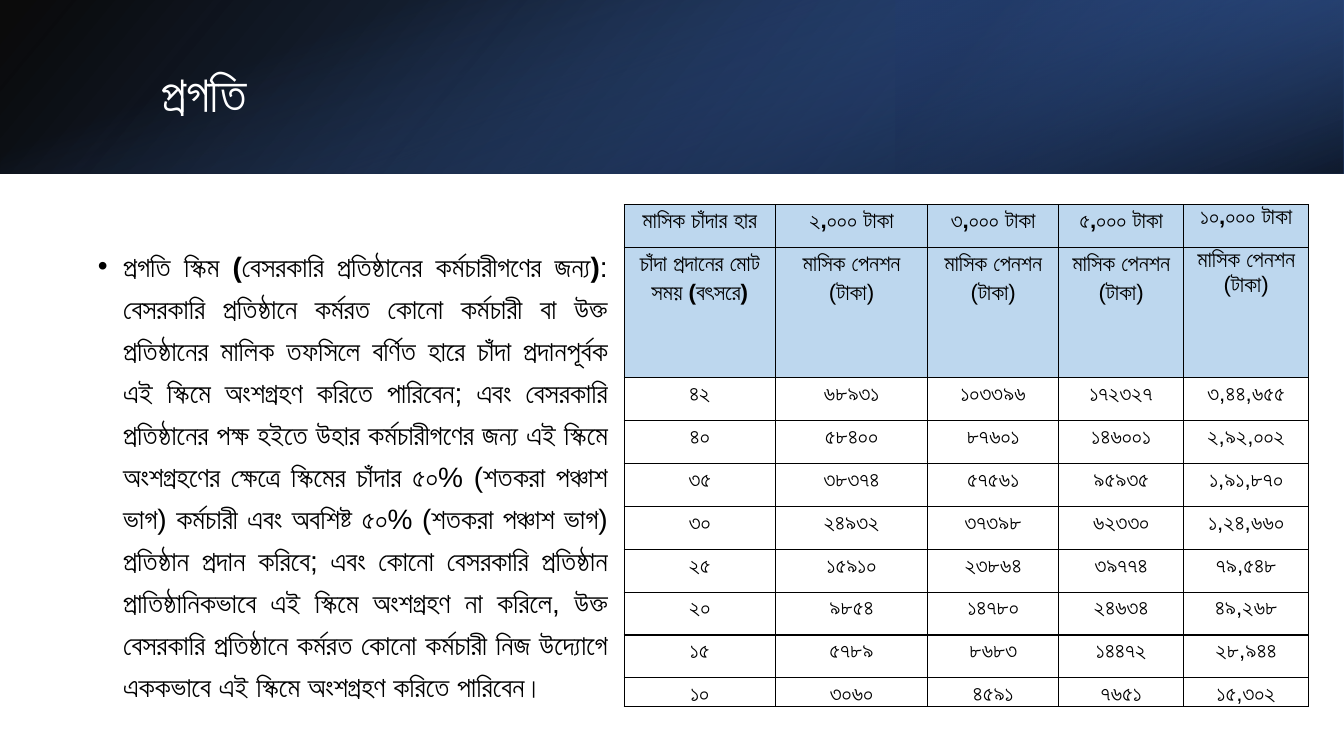
from lxml.etree import SubElement
from pptx import Presentation
from pptx.dml.color import RGBColor
from pptx.enum.shapes import MSO_SHAPE
from pptx.enum.text import MSO_ANCHOR, MSO_AUTO_SIZE, PP_ALIGN
from pptx.oxml.ns import qn
from pptx.util import Cm, Pt

WIDTH, HEIGHT, BANNER = 33.87, 19.05, 4.37
FONT = "Arial"
COLUMNS = [3.81, 3.84, 3.3, 3.15, 3.15]
ROWS = [1.08, 3.28] + [1.08] * 7 + [0.72]
PENSION = "মাসিক পেনশন\n(টাকা)"
PENSIONS = [
    ["মাসিক চাঁদার হার", "২,০০০ টাকা", "৩,০০০ টাকা", "৫,০০০ টাকা", "১০,০০০ টাকা"],
    ["চাঁদা প্রদানের মোট সময় (বৎসরে)"] + [PENSION] * 4,
    ["৪২", "৬৮৯৩১", "১০৩৩৯৬", "১৭২৩২৭", "৩,৪৪,৬৫৫"],
    ["৪০", "৫৮৪০০", "৮৭৬০১", "১৪৬০০১", "২,৯২,০০২"],
    ["৩৫", "৩৮৩৭৪", "৫৭৫৬১", "৯৫৯৩৫", "১,৯১,৮৭০"],
    ["৩০", "২৪৯৩২", "৩৭৩৯৮", "৬২৩৩০", "১,২৪,৬৬০"],
    ["২৫", "১৫৯১০", "২৩৮৬৪", "৩৯৭৭৪", "৭৯,৫৪৮"],
    ["২০", "৯৮৫৪", "১৪৭৮০", "২৪৬৩৪", "৪৯,২৬৮"],
    ["১৫", "৫৭৮৯", "৮৬৮৩", "১৪৪৭২", "২৮,৯৪৪"],
    ["১০", "৩০৬০", "৪৫৯১", "৭৬৫১", "১৫,৩০২"],
]
SCHEME_NAME = "প্রগতি স্কিম (বেসরকারি প্রতিষ্ঠানের কর্মচারীগণের জন্য)"
SCHEME_RULES = (
    ": বেসরকারি প্রতিষ্ঠানে কর্মরত কোনো কর্মচারী বা উক্ত প্রতিষ্ঠানের মালিক তফসিলে "
    "বর্ণিত হারে চাঁদা প্রদানপূর্বক এই স্কিমে অংশগ্রহণ করিতে পারিবেন; এবং বেসরকারি "
    "প্রতিষ্ঠানের পক্ষ হইতে উহার কর্মচারীগণের জন্য এই স্কিমে অংশগ্রহণের ক্ষেত্রে "
    "স্কিমের চাঁদার ৫০% (শতকরা পঞ্চাশ ভাগ) কর্মচারী এবং অবশিষ্ট ৫০% (শতকরা পঞ্চাশ "
    "ভাগ) প্রতিষ্ঠান প্রদান করিবে; এবং কোনো বেসরকারি প্রতিষ্ঠান প্রাতিষ্ঠানিকভাবে এই "
    "স্কিমে অংশগ্রহণ না করিলে, উক্ত বেসরকারি প্রতিষ্ঠানে কর্মরত কোনো কর্মচারী নিজ "
    "উদ্যোগে এককভাবে এই স্কিমে অংশগ্রহণ করিতে পারিবেন।"
)


def color(value):
    return RGBColor.from_string(value)


def apply(target, formats):
    for attribute, value in formats.items():
        setattr(target, attribute, value)


def place(shape, left, top, width, height):
    apply(shape, {"left": Cm(left), "top": Cm(top),
                  "width": Cm(width), "height": Cm(height)})


def add_run(paragraph, text, size, bold=False, ink="000000"):
    run = paragraph.add_run()
    run.text = text
    apply(run.font, {"size": Pt(size), "bold": bold, "name": FONT})
    run.font.color.rgb = color(ink)
    SubElement(run.font._element, qn("a:cs"), typeface=FONT)


def add_banner_layer(slide, depth, box, angle, stops, rotation=0, flipped=False):
    """Place a gradient behind the placeholders; stops are (position, colour, opacity) in percent."""
    layer = slide.shapes.add_shape(MSO_SHAPE.RECTANGLE, *map(Cm, box))
    layer.rotation = rotation
    layer.shadow.inherit = False
    layer.line.fill.background()
    layer.fill.gradient()
    layer.fill.gradient_angle = 360 - angle
    for stop, (position, shade, opacity) in zip(layer.fill.gradient_stops, stops):
        stop.position = position / 100
        stop.color.rgb = color(shade)
        SubElement(stop._gs[0], qn("a:alpha"), val=str(opacity * 1000))
    if flipped:
        layer._element.spPr.find(qn("a:xfrm")).set("flipH", "1")
    slide.shapes._spTree.insert(2 + depth, layer._element)


def add_banner(slide):
    offset = (WIDTH - BANNER) / 2
    add_banner_layer(slide, 0, (0, 0, WIDTH, BANNER), 140,
                     [(0, "000000", 96), (100, "2F5597", 100)], flipped=True)
    add_banner_layer(slide, 1, (22.58, 0, 11.29, BANNER), 320,
                     [(19, "203864", 68), (100, "4472C4", 79)], 180, True)
    add_banner_layer(slide, 2, (offset, -offset, BANNER, WIDTH), 340,
                     [(23, "4472C4", 0), (99, "000000", 74)], 90)


def fill_title(title):
    place(title, 3.81, 1.2, 27.89, 2.44)
    apply(title.text_frame, {"vertical_anchor": MSO_ANCHOR.MIDDLE,
                             "auto_size": MSO_AUTO_SIZE.NONE})
    heading = title.text_frame.paragraphs[0]
    apply(heading, {"alignment": PP_ALIGN.LEFT, "line_spacing": 0.9})
    add_run(heading, "প্রগতি", 36, ink="FFFFFF")


def fill_description(body):
    place(body, 2.06, 7.19, 13.51, 9.4)
    apply(body.text_frame, {"vertical_anchor": MSO_ANCHOR.MIDDLE,
                            "auto_size": MSO_AUTO_SIZE.NONE})
    scheme = body.text_frame.paragraphs[0]
    apply(scheme, {"alignment": PP_ALIGN.JUSTIFY, "line_spacing": 1.25,
                   "space_before": Pt(10)})
    properties = scheme._p.get_or_add_pPr()
    properties.set("marL", str(Cm(0.79)))
    properties.set("indent", str(Cm(-0.64)))
    SubElement(properties, qn("a:buChar"), char="•")
    add_run(scheme, SCHEME_NAME, 20, bold=True)
    add_run(scheme, SCHEME_RULES, 20)


def add_borders(cell):
    properties = cell._tc.get_or_add_tcPr()
    for index, side in enumerate(("lnL", "lnR", "lnT", "lnB")):
        border = properties.makeelement(qn("a:" + side), {"w": str(Pt(1))})
        solid = SubElement(border, qn("a:solidFill"))
        SubElement(solid, qn("a:srgbClr"), val="000000")
        properties.insert(index, border)


def fill_cell(cell, text, is_header, bold, side_margin, spacing):
    apply(cell, {"margin_left": Cm(side_margin), "margin_right": Cm(side_margin),
                 "margin_top": 0, "margin_bottom": 0})
    cell.fill.solid()
    cell.fill.fore_color.rgb = color("BDD7EE" if is_header else "FFFFFF")
    add_borders(cell)
    for index, line in enumerate(text.split("\n")):
        frame = cell.text_frame
        paragraph = frame.add_paragraph() if index else frame.paragraphs[0]
        apply(paragraph, {"alignment": PP_ALIGN.CENTER, "line_spacing": spacing})
        add_run(paragraph, line, 16, bold)


def add_pension_table(slide):
    table = slide.shapes.add_table(
        len(ROWS), len(COLUMNS), Cm(15.73), Cm(5.16),
        Cm(sum(COLUMNS)), Cm(sum(ROWS))).table
    for column, width in zip(table.columns, COLUMNS):
        column.width = Cm(width)
    for row, height in zip(table.rows, ROWS):
        row.height = Cm(height)
    for r, amounts in enumerate(PENSIONS):
        for c, amount in enumerate(amounts):
            is_header, is_last = r < 2, c == len(COLUMNS) - 1
            fill_cell(table.cell(r, c), amount, is_header, r == 0 or c == 0,
                      0.18 if is_last else 0.25,
                      1.0 if is_header and is_last else 1.15)


def main():
    deck = Presentation()
    apply(deck, {"slide_width": Cm(WIDTH), "slide_height": Cm(HEIGHT)})
    slide = deck.slides.add_slide(deck.slide_layouts[1])
    add_banner(slide)
    fill_title(slide.shapes.title)
    fill_description(slide.placeholders[1])
    add_pension_table(slide)
    deck.save("out.pptx")


if __name__ == "__main__":
    main()
